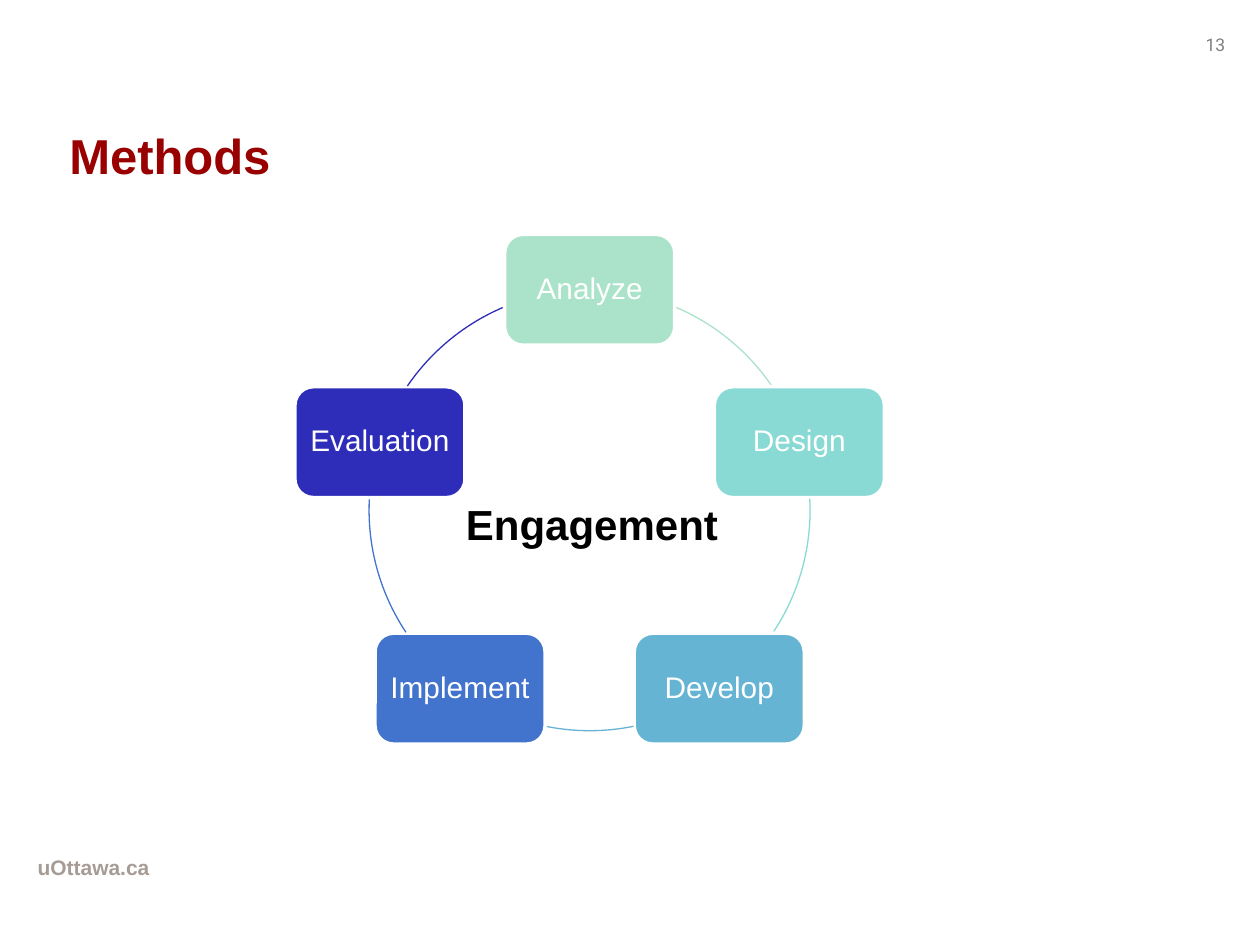
import math

import pptx
import pptx.util
import pptx.dml.color
import pptx.enum.shapes
import pptx.enum.text

Inches, Pt = pptx.util.Inches, pptx.util.Pt
RGBColor = pptx.dml.color.RGBColor
Kind = pptx.enum.shapes.MSO_SHAPE
Align = pptx.enum.text.PP_ALIGN
Anchor = pptx.enum.text.MSO_ANCHOR

WHITE = RGBColor(0xFF, 0xFF, 0xFF)
BLACK = RGBColor(0, 0, 0)
GRAY = RGBColor(0x80, 0x80, 0x80)
TAUPE = RGBColor(0xA6, 0x9C, 0x95)
GARNET = RGBColor(0x99, 0, 0)
MINT = RGBColor(0xAA, 0xE2, 0xCA)
AQUA = RGBColor(0x89, 0xDA, 0xD4)
SKY = RGBColor(0x66, 0xB4, 0xD3)
BLUE = RGBColor(0x43, 0x74, 0xCD)
NAVY = RGBColor(0x2D, 0x2D, 0xB9)


def style(para, size, color, bold=False, face="Arial"):
    font = para.font
    font.name, font.size, font.bold = face, Pt(size), bold
    font.color.rgb = color


def label(slide, text, box, *look):
    frame = slide.shapes.add_textbox(*map(Inches, box)).text_frame
    frame.word_wrap = True
    frame.text = text
    style(frame.paragraphs[0], *look)


deck = pptx.Presentation()
deck.slide_width, deck.slide_height = Inches(10), Inches(7.5)
slide = deck.slides.add_slide(deck.slide_layouts[5])

# Page number and footer
label(slide, "13", (9.47, 0.22, 0.47, 0.27), 10, GRAY, False, "Roboto")
label(slide, "uOttawa.ca", (0.2, 6.73, 4.96, 0.39), 12, TAUPE, True)

# Title
title = slide.shapes.title
title.left, title.top = Inches(0.45), Inches(0.76)
title.width, title.height = Inches(8.5), Inches(0.94)
title.text_frame.text = "Methods"
title.text_frame.vertical_anchor = Anchor.MIDDLE
para = title.text_frame.paragraphs[0]
para.alignment = Align.LEFT
style(para, 28, GARNET, True)

# Cycle: each step has a box and the arc leading to the next one (degrees)
steps = [
    ("Analyze", MINT, 293.2, 325.7),
    ("Design", AQUA, 357, 33.6),
    ("Develop", SKY, 78.5, 101.5),
    ("Implement", BLUE, 146.4, 183),
    ("Evaluation", NAVY, 214.3, 246.8),
]
mid_x, mid_y, radius = 4.68, 4.05, 1.75
width, height = 1.35, 0.88

for i, (name, color, start, end) in enumerate(steps):
    angle = math.radians(360 / len(steps) * i - 90)
    left = mid_x + radius * math.cos(angle) - width / 2
    top = mid_y + radius * math.sin(angle) - height / 2
    box = slide.shapes.add_shape(
        Kind.ROUNDED_RECTANGLE, Inches(left), Inches(top), Inches(width), Inches(height))
    box.shadow.inherit = False
    box.fill.solid()
    box.fill.fore_color.rgb = color
    box.line.color.rgb = WHITE
    box.line.width = Pt(2)
    frame = box.text_frame
    frame.margin_left = frame.margin_right = Inches(0.07)
    frame.vertical_anchor = Anchor.MIDDLE
    frame.text = name
    para = frame.paragraphs[0]
    para.alignment = Align.CENTER
    para.line_spacing = 0.9
    style(para, 17, WHITE)

    arc = slide.shapes.add_shape(
        Kind.ARC, Inches(mid_x - radius), Inches(mid_y - radius),
        Inches(2 * radius), Inches(2 * radius))
    arc.shadow.inherit = False
    arc.fill.background()
    arc.line.color.rgb = color
    arc.line.width = Pt(0.75)
    # An adjustment of 0.6 is one degree
    arc.adjustments[0] = start * 0.6
    arc.adjustments[1] = end * 0.6

# Centre of the cycle
label(slide, "Engagement", (3.6, 3.91, 2.2, 0.5), 24, BLACK, True)

deck.save("out.pptx")
